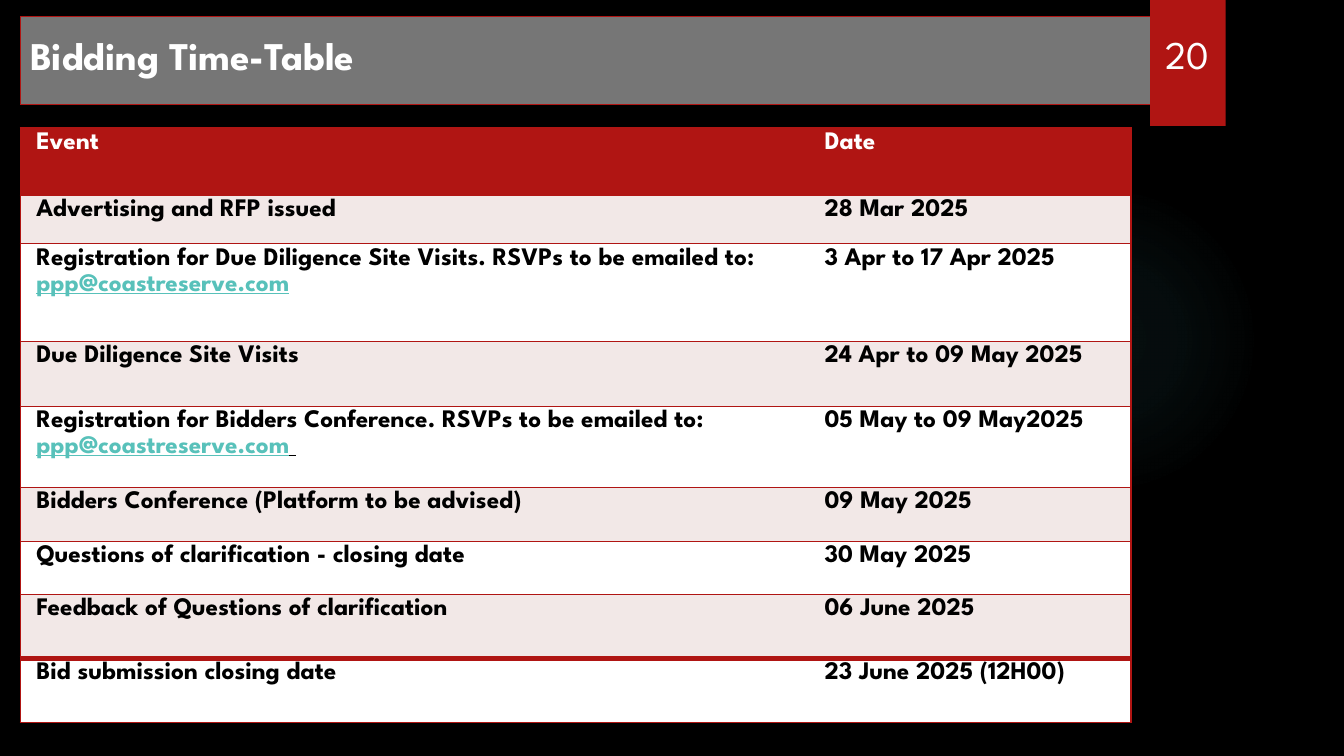
import pptx
import pptx.dml.color
import pptx.enum.shapes
import pptx.enum.text
import pptx.oxml
import pptx.oxml.ns
import pptx.util
from dataclasses import dataclass


@dataclass(frozen=True)
class Theme:
    font: str = "League Spartan"
    black: str = "000000"
    white: str = "FFFFFF"
    red: str = "B01513"
    grey: str = "767676"
    blush: str = "F2E8E7"
    link: str = "58C1BA"
    glow: str = "50B9C1"
    heading: int = 28
    body: int = 18


class Deck:
    """Draws one slide's elements on a grid of 0.1 inch columns and rows."""

    def __init__(self, theme, width, height):
        self.theme = theme
        self.prs = pptx.Presentation()
        self.prs.slide_width = self.unit(width)
        self.prs.slide_height = self.unit(height)
        self.s = self.prs.slides.add_slide(self.prs.slide_layouts[6])
        self.fill(self.s.background.fill, theme.black)

    def unit(self, n):
        return pptx.util.Inches(round(n / 10, 3))

    def fill(self, target, color):
        target.solid()
        target.fore_color.rgb = pptx.dml.color.RGBColor.from_string(color)

    def style(self, r, size, color, bold=False, underline=False):
        r.font.name = self.theme.font
        r.font.size = pptx.util.Pt(size)
        r.font.bold = bold
        r.font.underline = underline
        self.fill(r.font.fill, color)

    def shape(self, kind, *box):
        sp = self.s.shapes.add_shape(kind, *map(self.unit, box))
        sp.shadow.inherit = False
        sp.line.fill.background()
        return sp

    def rect(self, *box, color, line=None):
        sp = self.shape(pptx.enum.shapes.MSO_SHAPE.RECTANGLE, *box)
        self.fill(sp.fill, color)
        if line:
            self.fill(sp.line.fill, line)
            sp.line.width = pptx.util.Pt(0.75)
        return sp

    def glow(self, *box, stops):
        sp = self.shape(pptx.enum.shapes.MSO_SHAPE.OVAL, *box)
        gs = "".join(
            f'<a:gs pos="{pos * 1000}"><a:srgbClr val="{self.theme.glow}">'
            f'<a:alpha val="{alpha * 1000}"/></a:srgbClr></a:gs>'
            for pos, alpha in stops)
        sp.fill.background()
        old = sp.element.spPr.find(pptx.oxml.ns.qn("a:noFill"))
        old.getparent().replace(old, pptx.oxml.parse_xml(
            f'<a:gradFill {pptx.oxml.ns.nsdecls("a")}><a:gsLst>{gs}</a:gsLst>'
            '<a:path path="circle"><a:fillToRect l="50000" t="50000" r="50000" b="50000"/>'
            '</a:path></a:gradFill>'))

    def title(self, sp, text, top):
        tf = sp.text_frame
        tf.text = text
        tf.word_wrap = True
        tf.vertical_anchor = pptx.enum.text.MSO_ANCHOR.TOP
        tf.margin_top = self.unit(top)
        p = tf.paragraphs[0]
        p.alignment = pptx.enum.text.PP_ALIGN.LEFT
        self.style(p.runs[0], self.theme.heading, self.theme.white, bold=True)

    def number(self, text, *box):
        tf = self.s.shapes.add_textbox(*map(self.unit, box)).text_frame
        tf.text = text
        tf.word_wrap = True
        tf.vertical_anchor = pptx.enum.text.MSO_ANCHOR.BOTTOM
        p = tf.paragraphs[0]
        p.alignment = pptx.enum.text.PP_ALIGN.CENTER
        self.style(p.runs[0], self.theme.heading, self.theme.white)

    def border(self, cell, side, width):
        paint = (f'<a:solidFill><a:srgbClr val="{self.theme.red}"/></a:solidFill>'
                 if width else '<a:noFill/>')
        cell._tc.get_or_add_tcPr().append(pptx.oxml.parse_xml(
            f'<a:ln{side} {pptx.oxml.ns.nsdecls("a")} w="{width * 12700}">{paint}</a:ln{side}>'))

    def cell(self, cell, parts, indent, widths, background, color):
        for side, width in zip("LRTB", widths):
            self.border(cell, side, width)
        self.fill(cell.fill, background)
        cell.margin_left = self.unit(indent)
        cell.margin_right = cell.margin_top = cell.margin_bottom = 0
        p = cell.text_frame.paragraphs[0]
        p.text = parts[0]
        for part in parts[1:]:
            p.add_run().text = part
        p.line_spacing = 1.15
        p.space_after = pptx.util.Pt(8)
        for i, r in enumerate(p.runs):
            self.style(r, self.theme.body, self.theme.link if i == 1 else color,
                       bold=i < 2, underline=i > 0)

    def table(self, left, top, columns, heights, rows):
        t = self.theme
        last = len(rows) - 1
        table = self.s.shapes.add_table(
            len(rows), len(columns),
            *map(self.unit, (left, top, sum(columns), sum(heights)))).table
        for column, width in zip(table.columns, columns):
            column.width = self.unit(width)
        for i, (event, date) in enumerate(rows):
            table.rows[i].height = self.unit(heights[i])
            background = t.red if i == 0 else t.blush if i % 2 else t.white
            color = t.white if i == 0 else t.black
            above, below = 4 if i == last else 1, 4 if i == last - 1 else 1
            self.cell(table.cell(i, 0), event, 1.6, (1, 0, above, below), background, color)
            self.cell(table.cell(i, 1), (date,), 1, (0, 1, above, below), background, color)


def main():
    theme = Theme()
    deck = Deck(theme, 133.33, 75)
    email = "ppp@coastreserve.com"
    schedule = [
        (("Event",), "Date"),
        (("Advertising and RFP issued",), "28 Mar 2025"),
        (("Registration for Due Diligence Site Visits. RSVPs to be emailed to: ", email),
         "3 Apr to 17 Apr 2025"),
        (("Due Diligence Site Visits",), "24 Apr to 09 May 2025"),
        (("Registration for Bidders Conference. RSVPs to be emailed to: ", email, " "),
         "05 May to 09 May2025"),
        (("Bidders Conference (Platform to be advised)",), "09 May 2025"),
        (("Questions of clarification - closing date",), "30 May 2025"),
        (("Feedback of Questions of clarification",), "06 June 2025"),
        (("Bid submission closing date",), "23 June 2025 (12H00)"),
    ]
    deck.glow(94.1, 18.3, 30.8, 30.8, stops=((0, 7), (36, 6), (69, 0)))
    deck.rect(114.1, 0, 7.5, 12.5, color=theme.red)
    banner = deck.rect(2, 1.6, 112.1, 8.8, color=theme.grey, line=theme.red)
    deck.title(banner, "Bidding Time-Table", top=1.5)
    deck.number("20", 113.2, 3.2, 9.2, 5)
    deck.table(2, 12.7, (78.8, 31.4), (6.7, 4.8, 9.7, 6.4, 8.1, 5.3, 5.3, 6.3, 6.4), schedule)
    deck.prs.save("out.pptx")


if __name__ == "__main__":
    main()
